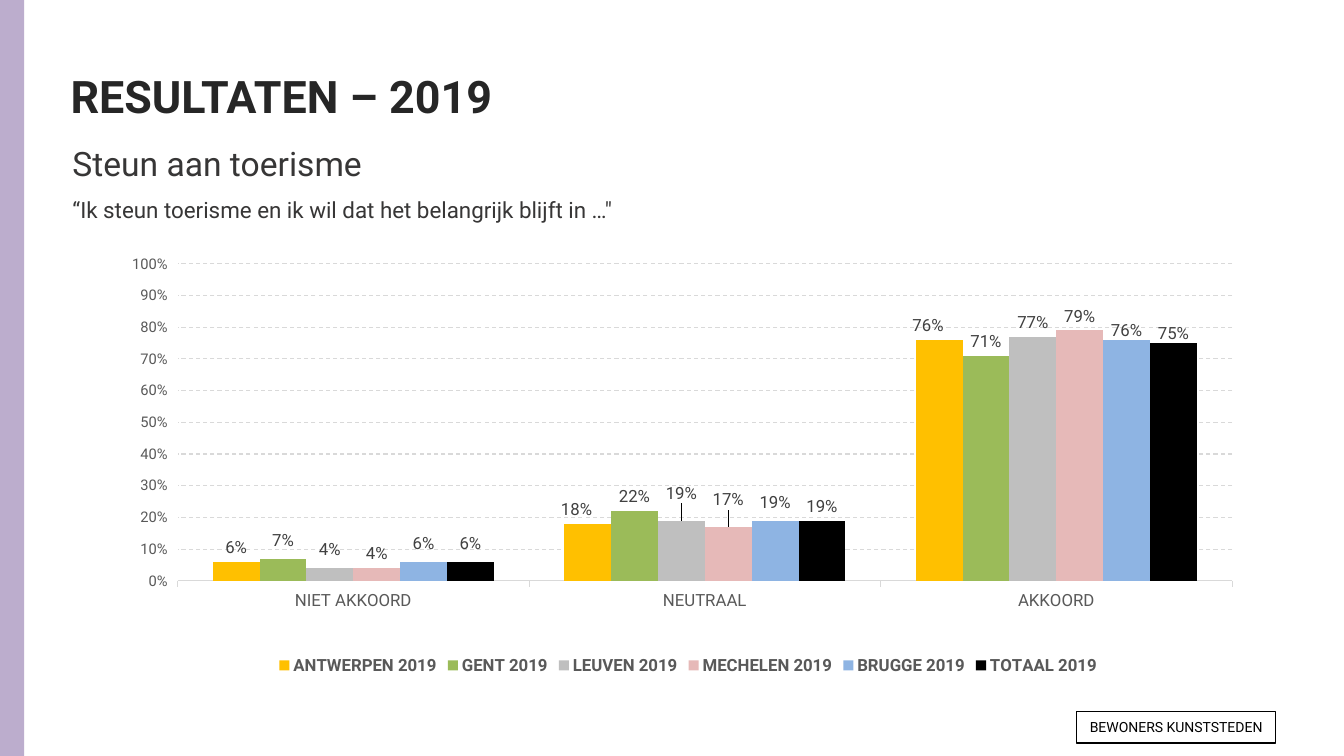
import pptx
import pptx.chart.data
import pptx.dml.color
import pptx.enum.chart
import pptx.enum.dml
import pptx.enum.shapes
import pptx.enum.text
import pptx.oxml
import pptx.oxml.ns
import pptx.util
from lxml import etree

Inches = pptx.util.Inches
Pt = pptx.util.Pt
RGBColor = pptx.dml.color.RGBColor
RECTANGLE = pptx.enum.shapes.MSO_SHAPE.RECTANGLE
MIDDLE = pptx.enum.text.MSO_ANCHOR.MIDDLE
ALIGN = pptx.enum.text.PP_ALIGN
qn = pptx.oxml.ns.qn

LILAC = RGBColor(0xB3, 0xA2, 0xC7)
TITLE_INK = RGBColor(0x26, 0x26, 0x26)
BODY_INK = RGBColor(0x37, 0x36, 0x36)
LABEL_INK = RGBColor(0x40, 0x40, 0x40)
AXIS_INK = RGBColor(0x59, 0x59, 0x59)
GRID = RGBColor(0xD9, 0xD9, 0xD9)
BLACK = RGBColor(0, 0, 0)

ANSWERS = ["NIET AKKOORD", "NEUTRAAL", "AKKOORD"]
CITIES = [
    ("ANTWERPEN", (0.06, 0.18, 0.76), RGBColor(0xFF, 0xC0, 0x00)),
    ("GENT", (0.07, 0.22, 0.71), RGBColor(0x9B, 0xBB, 0x59)),
    ("LEUVEN", (0.04, 0.19, 0.77), RGBColor(0xBF, 0xBF, 0xBF)),
    ("MECHELEN", (0.04, 0.17, 0.79), RGBColor(0xE6, 0xB9, 0xB8)),
    ("BRUGGE", (0.06, 0.19, 0.76), RGBColor(0x8E, 0xB4, 0xE3)),
    ("TOTAAL", (0.06, 0.19, 0.75), BLACK),
]
LABEL_SHIFTS = {
    ("ANTWERPEN", 1): (-0.01, 0),
    ("ANTWERPEN", 2): (-0.01, 0),
    ("GENT", 0): (0, -0.01),
    ("LEUVEN", 0): (0, -0.01),
    ("LEUVEN", 1): (0, -0.03),
    ("MECHELEN", 1): (0, -0.03),
    ("BRUGGE", 0): (0, -0.01),
    ("BRUGGE", 1): (0, -0.01),
    ("BRUGGE", 2): (0, 0.01),
    ("TOTAAL", 0): (0, -0.01),
    ("TOTAAL", 2): (0, 0.01),
}


def set_font(font, size, color, bold=False):
    font.name = "Roboto"
    font.size = Pt(size)
    font.bold = bold
    font.color.rgb = color


def manual_layout(**settings):
    layout = etree.Element(qn("c:layout"))
    manual = etree.SubElement(layout, qn("c:manualLayout"))
    for name, value in settings.items():
        etree.SubElement(manual, qn("c:" + name)).set("val", str(value))
    return layout


def add_side_strip(slide, left, top, width, height):
    strip = slide.shapes.add_shape(
        RECTANGLE, Inches(left), Inches(top), Inches(width), Inches(height))
    strip.shadow.inherit = False
    strip.line.fill.background()
    strip.fill.solid()
    strip.fill.fore_color.rgb = LILAC
    lilac = strip.fill._xPr.find(".//" + qn("a:srgbClr"))
    etree.SubElement(lilac, qn("a:alpha")).set("val", "88000")


def place_title(slide, left, top, width, height):
    title = slide.shapes.title
    title.left, title.top = Inches(left), Inches(top)
    title.width, title.height = Inches(width), Inches(height)
    title.text_frame.text = "RESULTATEN – 2019"
    title.text_frame.vertical_anchor = MIDDLE
    heading = title.text_frame.paragraphs[0]
    heading.alignment = ALIGN.LEFT
    set_font(heading.font, 32, TITLE_INK, True)


def add_statement(slide, left, top, width, height):
    frame = slide.shapes.add_textbox(
        Inches(left), Inches(top), Inches(width), Inches(height)).text_frame
    frame.word_wrap = True
    frame.text = ("Steun aan toerisme\n"
                  "“Ik steun toerisme en ik wil dat het belangrijk blijft in …\"")
    for paragraph, size in zip(frame.paragraphs, (24, 16)):
        paragraph.space_after = Pt(8)
        set_font(paragraph.font, size, BODY_INK)
    frame.paragraphs[1].space_before = Pt(1)


def style_axes(chart):
    answers = chart.category_axis
    set_font(answers.tick_labels.font, 12, AXIS_INK)
    answers.format.line.color.rgb = GRID
    answers.format.line.width = Pt(0.75)

    shares = chart.value_axis
    shares.minimum_scale, shares.maximum_scale = 0, 1
    shares.major_unit = 0.1
    shares.format.line.fill.background()
    set_font(shares.tick_labels.font, 10.5, AXIS_INK)
    shares.tick_labels.number_format = "0%"
    shares.tick_labels.number_format_is_linked = False
    grid_line = shares.major_gridlines.format.line
    grid_line.color.rgb = GRID
    grid_line.width = Pt(0.75)
    grid_line.dash_style = pptx.enum.dml.MSO_LINE.DASH


def style_city(series, city, color):
    above = pptx.enum.chart.XL_LABEL_POSITION.OUTSIDE_END
    series.format.fill.solid()
    series.format.fill.fore_color.rgb = color
    labels = series.data_labels
    labels.show_value = True
    labels.number_format = "0%"
    labels.number_format_is_linked = False
    labels.position = above
    set_font(labels.font, 12, LABEL_INK)
    for index in range(len(ANSWERS)):
        if (city, index) not in LABEL_SHIFTS:
            continue
        x, y = LABEL_SHIFTS[city, index]
        label = series.points[index].data_label
        label.position = above
        set_font(label.font, 12, LABEL_INK)
        element = label._dLbl
        number_format = etree.Element(qn("c:numFmt"))
        number_format.set("formatCode", "0%")
        number_format.set("sourceLinked", "0")
        element.insert(1, manual_layout(x=x, y=y))
        element.insert(2, number_format)


def add_support_chart(slide, left, top, width, height):
    data = pptx.chart.data.CategoryChartData(number_format="0%")
    data.categories = ANSWERS
    for city, shares, _ in CITIES:
        data.add_series(f"{city} 2019", shares)
    chart = slide.shapes.add_chart(
        pptx.enum.chart.XL_CHART_TYPE.COLUMN_CLUSTERED,
        Inches(left), Inches(top), Inches(width), Inches(height), data).chart
    set_font(chart.font, 10, BLACK)
    chart.has_title = False
    chart.has_legend = True
    chart.legend.position = pptx.enum.chart.XL_LEGEND_POSITION.BOTTOM
    chart.legend.include_in_layout = False
    set_font(chart.legend.font, 12, AXIS_INK, True)
    style_axes(chart)

    plot = chart.plots[0]
    plot.gap_width = 150
    plot.overlap = 0
    plot.vary_by_categories = False
    for series, (city, _, color) in zip(plot.series, CITIES):
        style_city(series, city, color)

    area = chart._chartSpace.chart.plotArea
    for layout in area.findall(qn("c:layout")):
        area.remove(layout)
    area.insert(0, manual_layout(
        layoutTarget="inner", xMode="edge", yMode="edge",
        x=0.04, y=0.03, w=0.95, h=0.74))


def add_audience_tag(slide, left, top, width, height):
    tag = slide.shapes.add_shape(
        RECTANGLE, Inches(left), Inches(top), Inches(width), Inches(height))
    tag.shadow.inherit = False
    tag.fill.background()
    tag.line.color.rgb = BLACK
    tag.line.width = Pt(1)
    tag.text_frame.text = "BEWONERS KUNSTSTEDEN"
    tag.text_frame.vertical_anchor = MIDDLE
    audience = tag.text_frame.paragraphs[0]
    audience.alignment = ALIGN.CENTER
    set_font(audience.font, 10, BLACK)


def main():
    deck = pptx.Presentation()
    deck.slide_width, deck.slide_height = Inches(13.33), Inches(7.5)
    slide = deck.slides.add_slide(deck.slide_layouts[5])
    add_side_strip(slide, 0, 0, 0.24, 7.5)
    place_title(slide, 0.6, 0.32, 9.5, 1.25)
    add_statement(slide, 0.62, 1.37, 9.47, 1.33)
    add_support_chart(slide, 1.31, 2.49, 11.02, 4.25)
    add_audience_tag(slide, 10.68, 7.06, 1.97, 0.31)
    deck.save("out.pptx")


if __name__ == "__main__":
    main()
